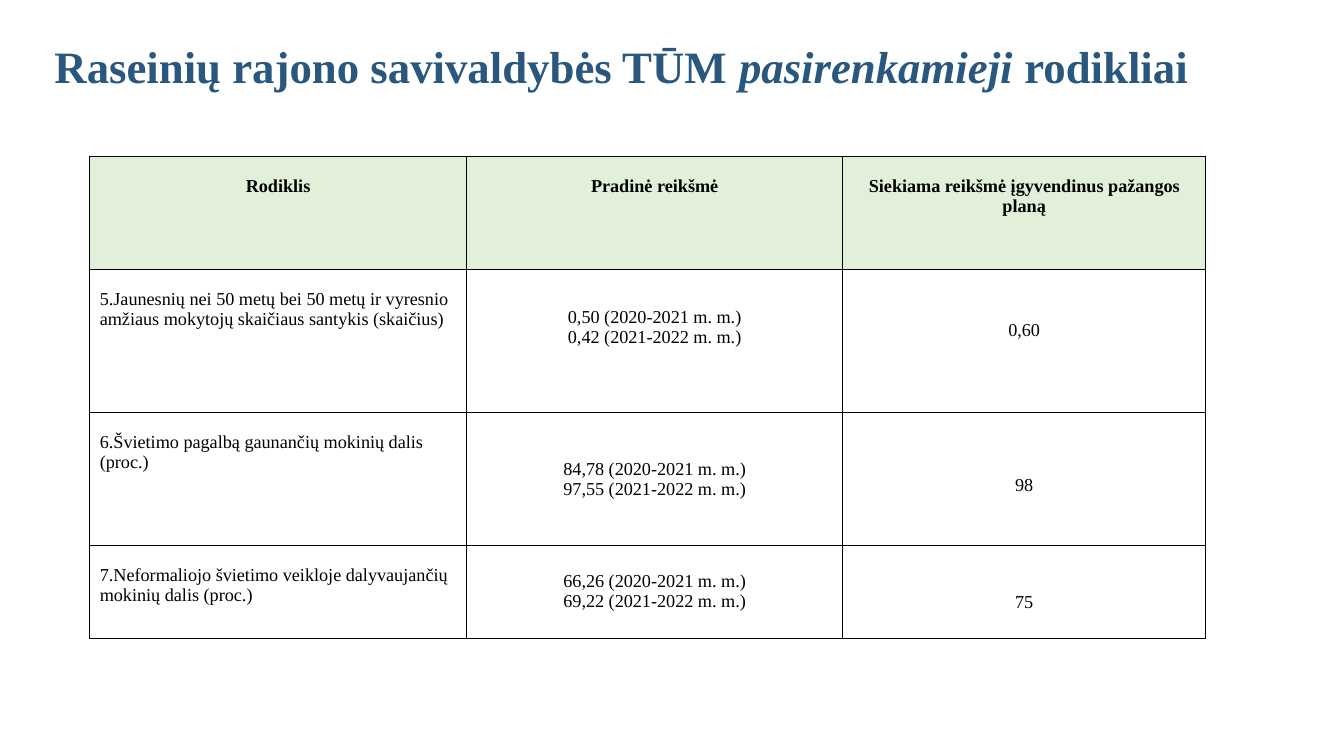
from lxml.etree import SubElement
from pptx import Presentation
from pptx.dml.color import RGBColor
from pptx.enum.text import MSO_ANCHOR as Anchor, PP_ALIGN as Align
from pptx.oxml.ns import qn
from pptx.util import Pt

FONT = "Times New Roman"
TITLE_BLUE = "29577E"
HEADER_GREEN = "E2EFD9"
BLACK = "000000"
SIDE_MARGIN = 7.2
EDGE_MARGIN = 5
TOP_MARGIN = 14

COLUMN_WIDTHS = [269, 269, 259]
ROW_HEIGHTS = [80.6, 102.2, 95, 66.2]
HEADERS = ["Rodiklis", "Pradinė reikšmė", "Siekiama reikšmė įgyvendinus pažangos planą"]
INDICATORS = [
    ("5.Jaunesnių nei 50 metų bei 50 metų ir vyresnio amžiaus mokytojų skaičiaus santykis (skaičius)",
     ["0,50 (2020-2021 m. m.)", "0,42 (2021-2022 m. m.)"], -9.6, "0,60", -7.5),
    ("6.Švietimo pagalbą gaunančių mokinių dalis (proc.)",
     ["84,78 (2020-2021 m. m.)", "97,55 (2021-2022 m. m.)"], 0, "98", 4.6),
    ("7.Neformaliojo švietimo veikloje dalyvaujančių mokinių dalis (proc.)",
     ["66,26 (2020-2021 m. m.)", "69,22 (2021-2022 m. m.)"], 0, "75", 7.5),
]


def color(value):
    """Return the colour for a hex string."""
    return RGBColor.from_string(value)


def add_text(paragraph, text, size=13, fill=BLACK, bold=False, italic=False):
    """Add a formatted run to a paragraph."""
    run = paragraph.add_run()
    run.text = text
    font = run.font
    font.name, font.size = FONT, Pt(size)
    font.bold, font.italic = bold, italic
    font.color.rgb = color(fill)


def add_title(slide):
    """Add the slide title with its italic word."""
    shape = slide.shapes.add_textbox(Pt(38.9), Pt(21.6), Pt(831.6), Pt(44.6))
    frame = shape.text_frame
    frame.word_wrap = True
    frame.margin_left = frame.margin_right = frame.margin_top = frame.margin_bottom = 0
    paragraph = frame.paragraphs[0]
    paragraph.line_spacing = 1.16
    for text, italic in [("Raseinių rajono savivaldybės TŪM ", False),
                         ("pasirenkamieji ", True), ("rodikliai", False)]:
        add_text(paragraph, text, size=32, fill=TITLE_BLUE, bold=True, italic=italic)


def add_borders(cell):
    """Draw thin black borders on all sides of a cell."""
    properties = cell._tc.get_or_add_tcPr()
    for side in ("lnL", "lnR", "lnT", "lnB"):
        line = SubElement(properties, qn(f"a:{side}"), w=str(Pt(0.75)))
        solid = SubElement(line, qn("a:solidFill"))
        SubElement(solid, qn("a:srgbClr"), val=BLACK)


def fill_cell(cell, lines, align=Align.CENTER, anchor=Anchor.TOP, top=TOP_MARGIN,
              bottom=EDGE_MARGIN, fill=None, bold=False):
    """Write lines into a cell and set its format."""
    add_borders(cell)
    if fill:
        cell.fill.solid()
        cell.fill.fore_color.rgb = color(fill)
    else:
        cell.fill.background()
    cell.margin_left = cell.margin_right = Pt(SIDE_MARGIN)
    cell.margin_top, cell.margin_bottom = Pt(top), Pt(bottom)
    cell.vertical_anchor = anchor
    frame = cell.text_frame
    for index, text in enumerate(lines):
        paragraph = frame.add_paragraph() if index else frame.paragraphs[0]
        paragraph.alignment = align
        add_text(paragraph, text, bold=bold)


def fill_value(cell, lines, shift):
    """Fill a vertically centred cell, moved down by shift points."""
    fill_cell(cell, lines, anchor=Anchor.MIDDLE, top=EDGE_MARGIN + max(0, 2 * shift),
              bottom=EDGE_MARGIN + max(0, -2 * shift))


def add_indicator_table(slide):
    """Add the table of indicators with start and target values."""
    frame = slide.shapes.add_table(len(ROW_HEIGHTS), len(COLUMN_WIDTHS), Pt(64.1), Pt(111.8),
                                   Pt(sum(COLUMN_WIDTHS)), Pt(sum(ROW_HEIGHTS)))
    table = frame.table
    table.first_row = table.horz_banding = False
    for column, width in zip(table.columns, COLUMN_WIDTHS):
        column.width = Pt(width)
    for row, height in zip(table.rows, ROW_HEIGHTS):
        row.height = Pt(height)
    for index, header in enumerate(HEADERS):
        fill_cell(table.cell(0, index), [header], fill=HEADER_GREEN, bold=True)
    for index, (name, start, start_shift, target, target_shift) in enumerate(INDICATORS, 1):
        fill_cell(table.cell(index, 0), [name], align=Align.LEFT)
        fill_value(table.cell(index, 1), start, start_shift)
        fill_value(table.cell(index, 2), [target], target_shift)


def main():
    """Build and save the slide."""
    presentation = Presentation()
    presentation.slide_width, presentation.slide_height = Pt(960), Pt(540)
    slide = presentation.slides.add_slide(presentation.slide_layouts[6])
    add_title(slide)
    add_indicator_table(slide)
    presentation.save("out.pptx")


if __name__ == "__main__":
    main()
